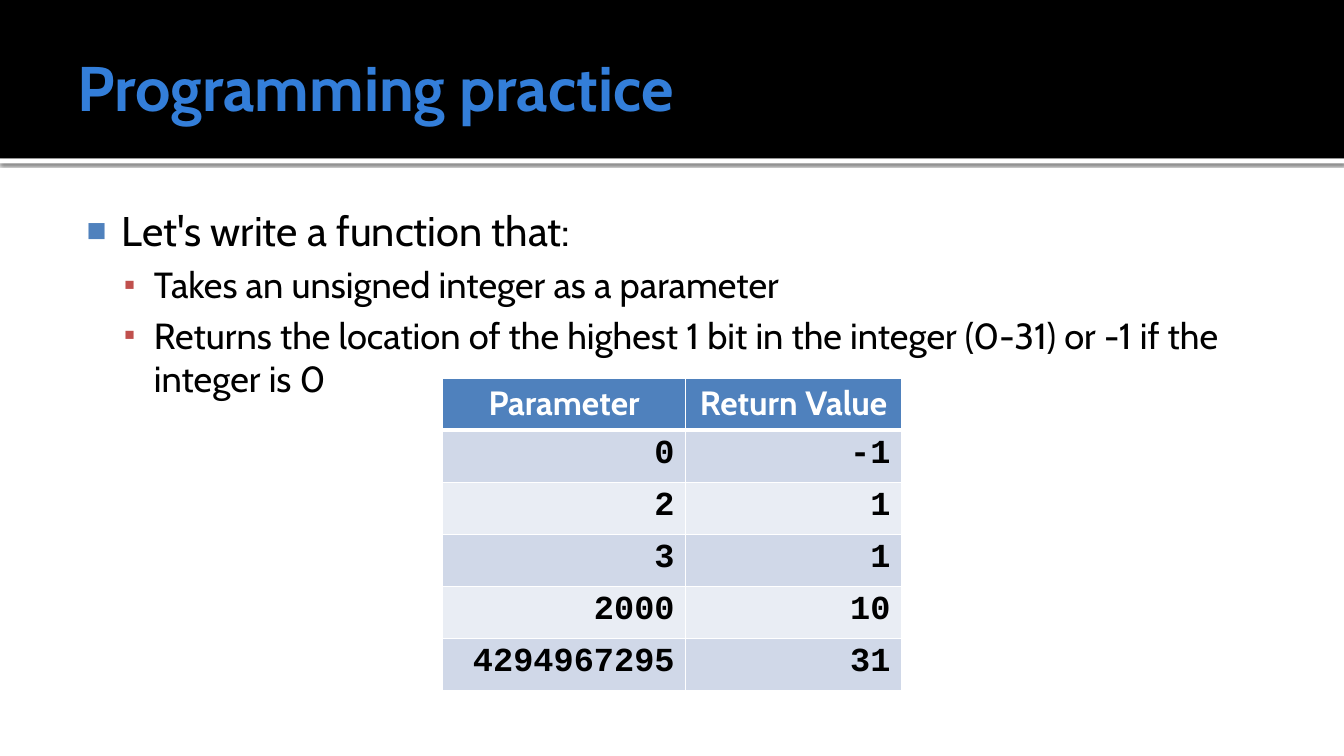
import pptx
import pptx.dml.color
import pptx.enum.shapes
import pptx.enum.text
import pptx.oxml
import pptx.oxml.ns
import pptx.util
from lxml import etree

Cm, Pt = pptx.util.Cm, pptx.util.Pt
ALIGN = pptx.enum.text.PP_ALIGN
COLORS = {
    "black": "000000", "white": "FFFFFF", "title": "337ED9",
    "blue": "4F81BD", "red": "C0504D", "odd": "D0D8E8", "even": "E9EDF4",
}
LEVELS = [
    {"size": 29.6, "before": 0, "margin": 1.22, "indent": -0.89,
     "bullet": "■", "color": "blue", "scale": 80},
    {"size": 25.9, "before": 5, "margin": 2.03, "indent": -0.76,
     "bullet": "▪", "color": "red", "scale": 90},
]
ITEMS = [
    (0, "Let's write a function that:"),
    (1, "Takes an unsigned integer as a parameter"),
    (1, "Returns the location of the highest 1 bit in the integer (0-31) "
        "or -1 if the integer is 0"),
]
ROWS = [
    ("Parameter", "Return Value"),
    ("0", "-1"),
    ("2", "1"),
    ("3", "1"),
    ("2000", "10"),
    ("4294967295", "31"),
]


class PracticeSlide:
    """Holds the style and the current slide, and draws its elements."""

    def __init__(self, deck):
        self.page = deck.slides.add_slide(deck.slide_layouts[1])
        self.heading_font = "Cabin"
        self.code_font = "Courier New"

    def color(self, name):
        return pptx.dml.color.RGBColor.from_string(COLORS[name])

    def node(self, parent, tag, **attributes):
        return etree.SubElement(parent, pptx.oxml.ns.qn(tag), attributes)

    def style(self, para, size, color, bold=False, face=None):
        font = para.font
        font.name = face or self.heading_font
        font.size, font.bold = Pt(size), bold
        font.color.rgb = self.color(color)

    def band(self, top, height, color, depth, shadow=False):
        shape = self.page.shapes.add_shape(
            pptx.enum.shapes.MSO_SHAPE.RECTANGLE, 0, Cm(top), Cm(33.87), Cm(height))
        shape.fill.solid()
        shape.fill.fore_color.rgb = self.color(color)
        shape.line.fill.background()
        shape.shadow.inherit = False
        if shadow:
            effects = shape._element.spPr.find(pptx.oxml.ns.qn("a:effectLst"))
            outer = self.node(effects, "a:outerShdw", blurRad=str(Pt(2.5)),
                              dist=str(Pt(0.8)), dir="5400000")
            shade = self.node(outer, "a:srgbClr", val=COLORS["black"])
            self.node(shade, "a:alpha", val="60000")
        tree = shape._element.getparent()
        tree.insert(2 + depth, shape._element)

    def place(self, box, top, height, insets, anchor):
        box.left, box.top, box.width, box.height = Cm(1.7), Cm(top), Cm(30.48), Cm(height)
        frame = box.text_frame
        frame.auto_size = pptx.enum.text.MSO_AUTO_SIZE.NONE
        frame.word_wrap = True
        frame.vertical_anchor = anchor
        (frame.margin_left, frame.margin_top,
         frame.margin_right, frame.margin_bottom) = map(Cm, insets)
        return frame

    def title(self, text):
        frame = self.place(self.page.shapes.title, 0.43, 3.48,
                           (0.25, 0.13, 0.13, 0.13), pptx.enum.text.MSO_ANCHOR.MIDDLE)
        frame.text = text
        para = frame.paragraphs[0]
        para.alignment = ALIGN.LEFT
        self.style(para, 45, "title", bold=True)

    def bullets(self, items):
        frame = self.place(self.page.placeholders[1], 4.93, 5.23,
                           (0.15, 0.25, 0.25, 0.13), pptx.enum.text.MSO_ANCHOR.TOP)
        frame.text = "\n".join(text for _, text in items)
        for para, (level, _) in zip(frame.paragraphs, items):
            look = LEVELS[level]
            para.level = level
            para.space_before = Pt(look["before"])
            self.style(para, look["size"], "black")
            properties = para._p.get_or_add_pPr()
            properties.set("marL", str(Cm(look["margin"])))
            properties.set("indent", str(Cm(look["indent"])))
            marks = [
                pptx.oxml.parse_xml(f'<a:{tag} {pptx.oxml.ns.nsdecls("a")} {value}')
                for tag, value in (
                    ("buClr", f'><a:srgbClr val="{COLORS[look["color"]]}"/></a:buClr>'),
                    ("buSzPct", f'val="{look["scale"] * 1000}"/>'),
                    ("buChar", f'char="{look["bullet"]}"/>'))
            ]
            spacing = properties.find(pptx.oxml.ns.qn("a:spcBef"))
            for mark in reversed(marks):
                spacing.addnext(mark)

    def borders(self, cell, row):
        properties = cell._tc.get_or_add_tcPr()
        widths = {"L": 1, "R": 1, "T": 3 if row == 1 else 1, "B": 3 if row == 0 else 1}
        for place, (side, width) in enumerate(widths.items()):
            line = self.node(properties, f"a:ln{side}", w=str(Pt(width)))
            fill = self.node(line, "a:solidFill")
            self.node(fill, "a:srgbClr", val=COLORS["white"])
            properties.insert(place, line)

    def table(self, rows):
        table = self.page.shapes.add_table(
            len(rows), 2, Cm(11.15), Cm(9.53), Cm(11.57), Cm(7.88)).table
        for column, width in zip(table.columns, (6.13, 5.44)):
            column.width = Cm(width)
        for row, texts in enumerate(rows):
            for column, text in enumerate(texts):
                cell = table.cell(row, column)
                cell.text = text
                cell.margin_left = cell.margin_right = Cm(0.28)
                cell.margin_top = cell.margin_bottom = Cm(0.13)
                cell.fill.solid()
                para = cell.text_frame.paragraphs[0]
                if row == 0:
                    fill = "blue"
                    para.alignment = ALIGN.CENTER
                    self.style(para, 24, "white", bold=True)
                else:
                    fill = "odd" if row % 2 else "even"
                    para.alignment = ALIGN.RIGHT
                    self.style(para, 24, "black", bold=True, face=self.code_font)
                cell.fill.fore_color.rgb = self.color(fill)
                self.borders(cell, row)


def main():
    deck = pptx.Presentation()
    deck.slide_width, deck.slide_height = Cm(33.87), Cm(19.05)
    slide = PracticeSlide(deck)
    slide.band(3.99, 0.13, "white", depth=0, shadow=True)
    slide.band(0, 3.99, "black", depth=1)
    slide.title("Programming practice")
    slide.bullets(ITEMS)
    slide.table(ROWS)
    deck.save("out.pptx")


if __name__ == "__main__":
    main()
